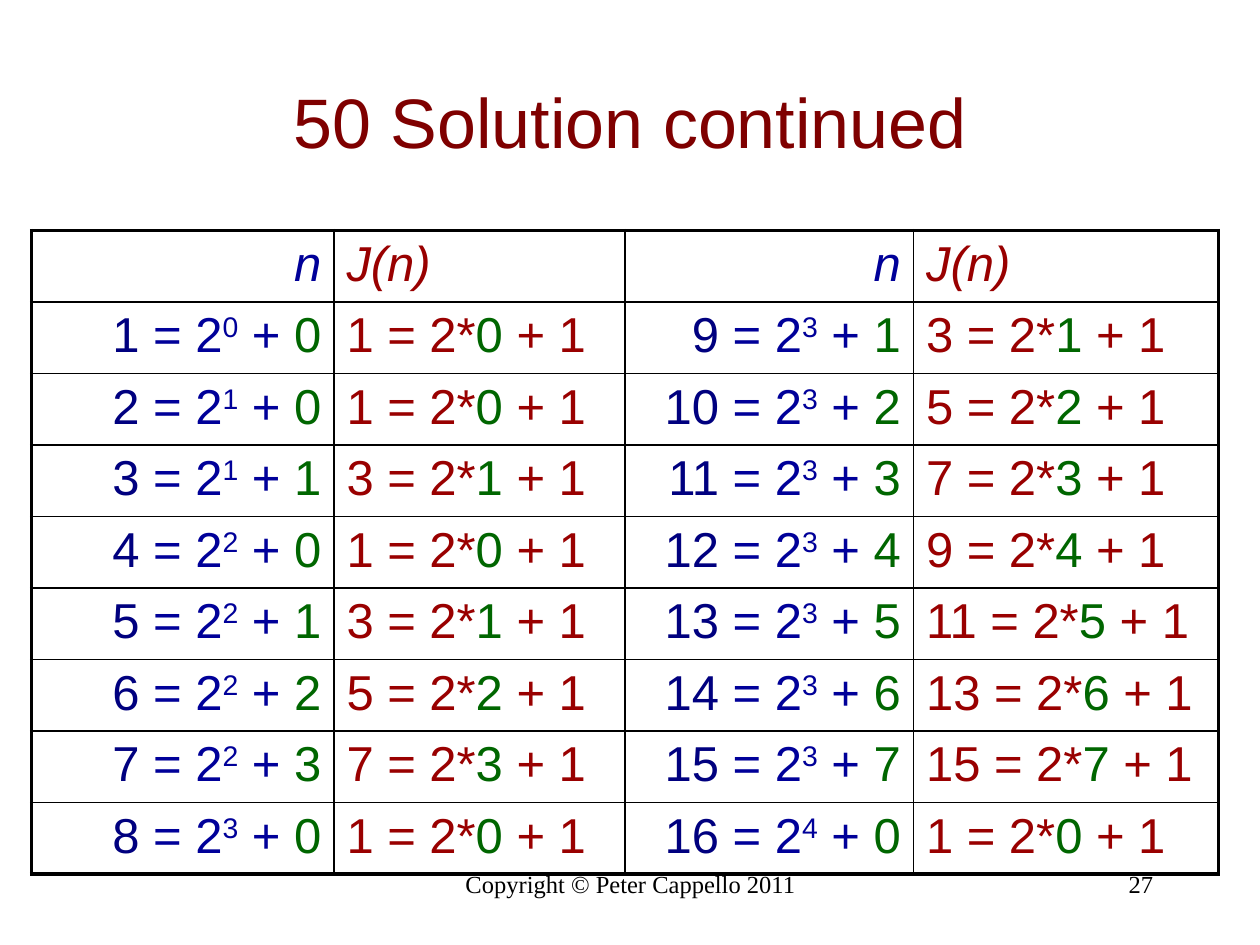
"""Build a slide tabulating n = 2^k + l beside J(n) = 2*l + 1."""
import pptx
import pptx.dml.color
import pptx.enum.text
import pptx.oxml.ns
import pptx.util
from lxml import etree

ALIGN = pptx.enum.text.PP_ALIGN
IN = pptx.util.Inches
BLACK, MAROON, RED, NAVY, BLUE, GREEN = (
    "000000", "7F0000", "990000", "00007F", "000099", "006600")
COLS = [2.4, 2.31, 2.29, 2.42]
ROW_HEIGHT = 0.56
ROWS = 9


def color(value):
    """Turn a hex string into a colour."""
    return pptx.dml.color.RGBColor.from_string(value)


def format_paragraph(p, size, name, align, italic=None):
    """Set the font and alignment of a paragraph."""
    p.alignment = align
    p.font.size = pptx.util.Pt(size)
    p.font.name = name
    p.font.italic = italic


def add_run(p, text, fill, superscript=False):
    """Append a coloured run, raised if asked."""
    r = p.add_run()
    r.text = text
    r.font.color.rgb = color(fill)
    if superscript:
        r._r.get_or_add_rPr().set("baseline", "30000")


def add_title(s, text):
    """Place and fill the title placeholder."""
    sp = s.shapes.title
    sp.left, sp.top, sp.width, sp.height = IN(0.75), IN(0.33), IN(8.5), IN(1.25)
    sp.text_frame.vertical_anchor = pptx.enum.text.MSO_ANCHOR.MIDDLE
    p = sp.text_frame.paragraphs[0]
    format_paragraph(p, 40, "Arial", ALIGN.CENTER)
    add_run(p, text, MAROON)


def add_footer(s, text, left, width, align):
    """Add a line of footer text."""
    tf = s.shapes.add_textbox(IN(left), IN(6.85), IN(width), IN(0.5)).text_frame
    tf.word_wrap = True
    p = tf.paragraphs[0]
    format_paragraph(p, 14, "Times New Roman", align)
    add_run(p, text, BLACK)


def set_borders(cell, row, col):
    """Draw thick lines on the table's outer edge and thin ones inside."""
    outer = {"L": col == 0, "R": col == len(COLS) - 1,
             "T": row == 0, "B": row == ROWS - 1}
    qn = pptx.oxml.ns.qn
    tcPr = cell._tc.get_or_add_tcPr()
    for side, thick in outer.items():
        width = pptx.util.Pt(2.25 if thick else 1)
        ln = etree.SubElement(tcPr, qn(f"a:ln{side}"), w=str(int(width)))
        fill = etree.SubElement(ln, qn("a:solidFill"))
        etree.SubElement(fill, qn("a:srgbClr"), val=BLACK)


def cell_runs(row, col):
    """Work out the text runs of a cell from its row and column."""
    is_n = col % 2 == 0
    if row == 0:
        return [("n", BLUE)] if is_n else [("J(n)", RED)]
    n = row + (ROWS - 1) * (col // 2)
    k = n.bit_length() - 1
    rest = n - 2 ** k
    if is_n:
        return [(f"{n} ", NAVY), ("= 2", BLUE), (str(k), BLUE, True),
                (" + ", BLUE), (str(rest), GREEN)]
    return [(f"{2 * rest + 1} = 2*", RED), (str(rest), GREEN), (" + 1", RED)]


def add_solution_table(s):
    """Add the table of n and J(n) in two column pairs."""
    table = s.shapes.add_table(ROWS, len(COLS), IN(0.25), IN(1.83),
                               IN(sum(COLS)), IN(ROWS * ROW_HEIGHT)).table
    table.first_row = table.horz_banding = False
    for column, width in zip(table.columns, COLS):
        column.width = IN(width)
    for row in range(ROWS):
        table.rows[row].height = IN(ROW_HEIGHT)
        for col in range(len(COLS)):
            cell = table.cell(row, col)
            set_borders(cell, row, col)
            cell.fill.background()
            p = cell.text_frame.paragraphs[0]
            align = ALIGN.LEFT if col % 2 else ALIGN.RIGHT
            format_paragraph(p, 28, "Arial", align, italic=row == 0)
            for run in cell_runs(row, col):
                add_run(p, *run)


def main():
    """Build and save the slide."""
    prs = pptx.Presentation()
    prs.slide_width, prs.slide_height = IN(10), IN(7.5)
    s = prs.slides.add_slide(prs.slide_layouts[5])
    add_footer(s, "Copyright © Peter Cappello 2011", 3.42, 3.17, ALIGN.CENTER)
    add_footer(s, "27", 7.17, 2.08, ALIGN.RIGHT)
    add_title(s, "50 Solution continued")
    add_solution_table(s)
    prs.save("out.pptx")


if __name__ == "__main__":
    main()
